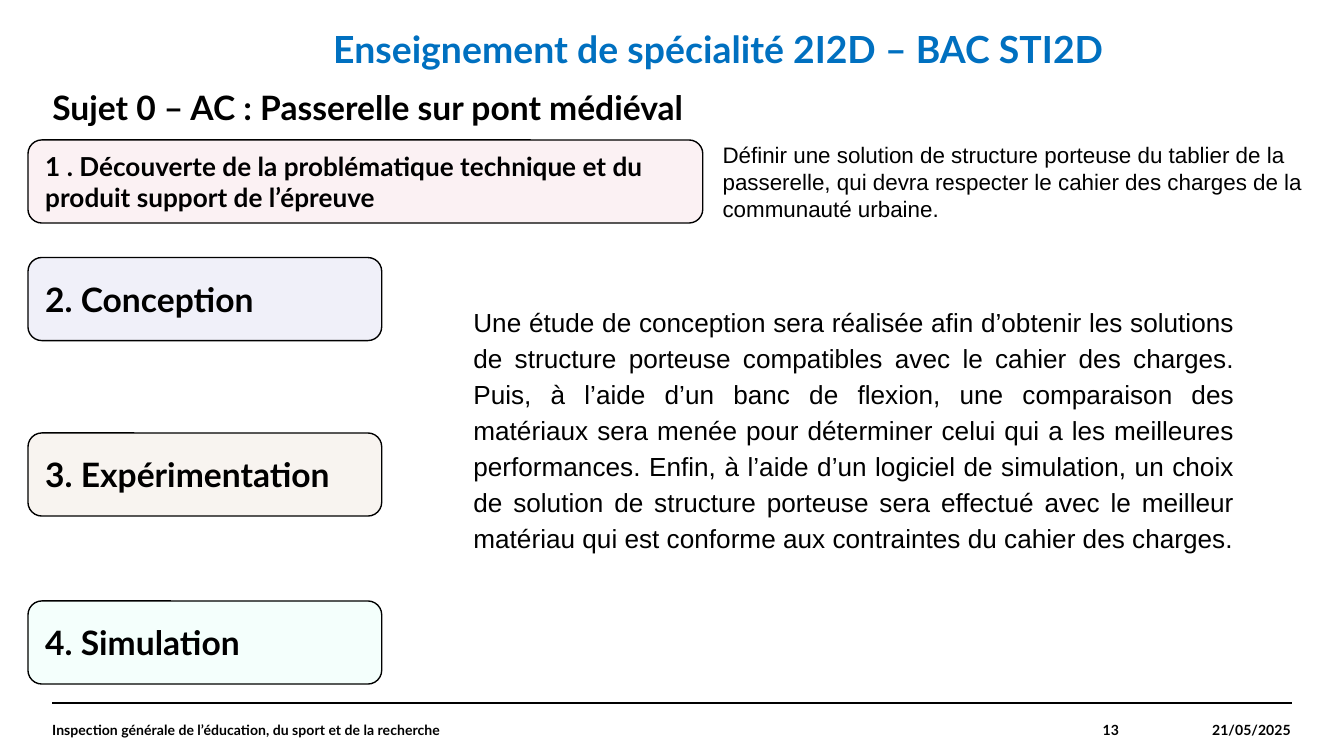
"""Build the 2I2D subject slide: footbridge on a medieval bridge."""
import pptx
import pptx.dml.color
import pptx.enum.shapes
import pptx.enum.text
import pptx.oxml.ns
import pptx.util
from lxml import etree

PX = 6350
ALIGN = pptx.enum.text.PP_ALIGN
ANCHOR = pptx.enum.text.MSO_ANCHOR
KIND = pptx.enum.shapes.MSO_SHAPE
qn = pptx.oxml.ns.qn


def hue(code):
    return pptx.dml.color.RGBColor.from_string(code)


def write(shape, box, text, size, font="Lato", color="000000", bold=True,
          align=ALIGN.LEFT, anchor=ANCHOR.TOP, flush=False):
    shape.left, shape.top, shape.width, shape.height = [n * PX for n in box]
    frame = shape.text_frame
    frame.word_wrap = True
    frame.auto_size = pptx.enum.text.MSO_AUTO_SIZE.NONE
    frame.vertical_anchor = anchor
    if flush:
        frame.margin_left = frame.margin_right = 0
        frame.margin_top = frame.margin_bottom = 0
    para = frame.paragraphs[0]
    para.alignment = align
    para.space_before = pptx.util.Pt(0)
    run = para.add_run()
    run.text = text
    run.font.size = pptx.util.Pt(size)
    run.font.name = font
    run.font.bold = bold
    run.font.color.rgb = hue(color)
    return para


deck = pptx.Presentation()
deck.slide_width, deck.slide_height = 1440 * PX, 810 * PX
slide = deck.slides.add_slide(deck.slide_layouts[1])
shapes = slide.shapes

rule = shapes.add_connector(pptx.enum.shapes.MSO_CONNECTOR.STRAIGHT,
                            56 * PX, 753 * PX, 1384 * PX, 753 * PX)
rule.line.color.rgb = hue("000000")
rule.line.width = pptx.util.Pt(0.8)
etree.SubElement(rule._element.spPr, qn("a:effectLst"))

title = write(shapes.title, (56, 98, 1326, 56),
              "Sujet 0 – AC : Passerelle sur pont médiéval", 18, flush=True)
title.line_spacing = 0.9

head = write(slide.placeholders[1], (357, 28, 896, 56),
             "Enseignement de spécialité 2I2D – BAC STI2D", 20,
             color="0070C0", flush=True)
props = head._p.get_or_add_pPr()
props.set("marL", "0")
props.set("indent", "0")
etree.SubElement(props, qn("a:buNone"))

FOOT = [
    (56, 930, "Inspection générale de l’éducation, du sport et de la recherche", ALIGN.LEFT),
    (986, 213, "13", ALIGN.RIGHT),
    (1199, 184, "21/05/2025", ALIGN.RIGHT),
]
for left, width, text, align in FOOT:
    write(shapes.add_textbox(0, 0, 0, 0), (left, 754, width, 56), text, 7.5,
          align=align, anchor=ANCHOR.MIDDLE, flush=True)

STEPS = [
    (150, 723, 14, "F2C9D1",
     "1 . Découverte de la problématique technique et du produit support de l’épreuve"),
    (276, 379, 18, "C6C6EA", "2. Conception"),
    (464, 379, 18, "E7D4C6", "3. Expérimentation"),
    (644, 379, 18, "D5FFF4", "4. Simulation"),
]
for top, width, size, tint, text in STEPS:
    step = shapes.add_shape(KIND.ROUNDED_RECTANGLE, 0, 0, 0, 0)
    step.shadow.inherit = False
    step.fill.solid()
    step.fill.fore_color.rgb = hue(tint)
    shade = step._element.spPr.find(qn("a:solidFill"))[0]
    etree.SubElement(shade, qn("a:alpha"), val="25000")
    step.line.color.rgb = hue("000000")
    step.line.width = pptx.util.Pt(0.75)
    write(step, (30, top, width, 89), text, size, anchor=ANCHOR.MIDDLE)

goal = write(
    shapes.add_textbox(0, 0, 0, 0), (760, 144, 678, 102),
    "Définir une solution de structure porteuse du tablier de la passerelle, "
    "qui devra respecter le cahier des charges de la communauté urbaine.",
    12, font="Arial", bold=False)
goal.space_after = pptx.util.Pt(8)

study = write(
    shapes.add_textbox(0, 0, 0, 0), (493, 316, 844, 285),
    "Une étude de conception sera réalisée afin d’obtenir les solutions de "
    "structure porteuse compatibles avec le cahier des charges. Puis, à l’aide "
    "d’un banc de flexion, une comparaison des matériaux sera menée pour "
    "déterminer celui qui a les meilleures performances. Enfin, à l’aide d’un "
    "logiciel de simulation, un choix de solution de structure porteuse sera "
    "effectué avec le meilleur matériau qui est conforme aux contraintes du "
    "cahier des charges.",
    14, font="Arial", bold=False, align=ALIGN.JUSTIFY)
study.line_spacing = 1.15
study.space_after = pptx.util.Pt(12)

deck.save("out.pptx")
